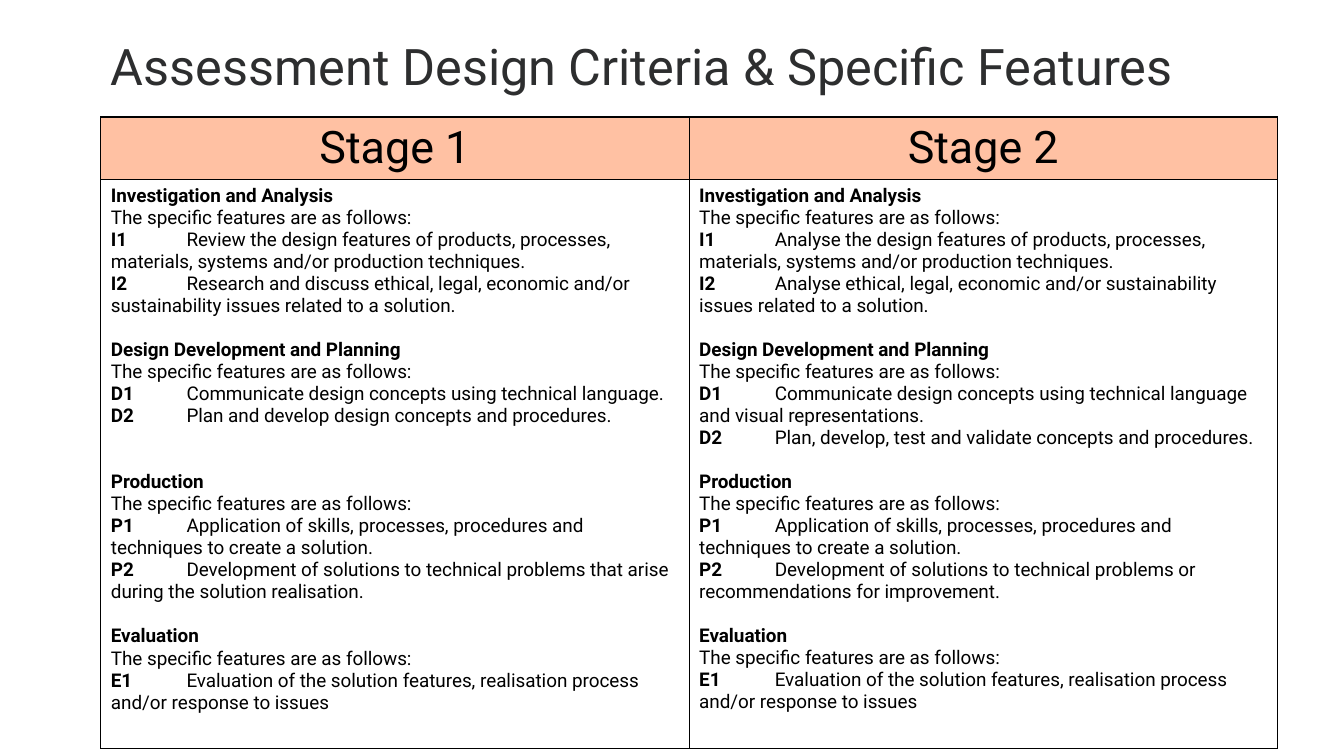
from dataclasses import dataclass

from lxml import etree
from pptx import Presentation
from pptx.dml.color import RGBColor
from pptx.enum import text as txt
from pptx.oxml import ns
from pptx.util import Inches, Pt


@dataclass(frozen=True)
class Theme:
    font: str = "Roboto"
    title_color: str = "2D2E2F"
    ink: str = "000000"
    header_fill: str = "FFC1A3"
    body_fill: str = "FFFFFF"
    title_size: float = 36
    stage_size: float = 32
    body_size: float = 13.5
    line_height: float = 15.8
    border: float = 1


@dataclass(frozen=True)
class Criterion:
    heading: str
    features: dict[str, str]
    lines_before: int = 1


@dataclass(frozen=True)
class Stage:
    name: str
    criteria: list[Criterion]


THEME = Theme()
INTRO = "The specific features are as follows:"

# Criteria that are the same at both stages
P1 = "Application of skills, processes, procedures and techniques to create a solution."
EVALUATION = Criterion("Evaluation", {
    "E1": "Evaluation of the solution features, realisation process and/or response to issues"})

STAGES = [
    Stage("Stage 1", [
        Criterion("Investigation and Analysis", {
            "I1": "Review the design features of products, processes, materials, "
                  "systems and/or production techniques.",
            "I2": "Research and discuss ethical, legal, economic and/or "
                  "sustainability issues related to a solution."}, 0),
        Criterion("Design Development and Planning", {
            "D1": "Communicate design concepts using technical language.",
            "D2": "Plan and develop design concepts and procedures."}),
        Criterion("Production", {
            "P1": P1,
            "P2": "Development of solutions to technical problems that arise "
                  "during the solution realisation."}, 2),
        EVALUATION]),
    Stage("Stage 2", [
        Criterion("Investigation and Analysis", {
            "I1": "Analyse the design features of products, processes, materials, "
                  "systems and/or production techniques.",
            "I2": "Analyse ethical, legal, economic and/or sustainability "
                  "issues related to a solution."}, 0),
        Criterion("Design Development and Planning", {
            "D1": "Communicate design concepts using technical language "
                  "and visual representations.",
            "D2": "Plan, develop, test and validate concepts and procedures."}),
        Criterion("Production", {
            "P1": P1,
            "P2": "Development of solutions to technical problems or "
                  "recommendations for improvement."}),
        EVALUATION]),
]


def write(paragraph, content: str, *, size: float = THEME.body_size,
          color: str = THEME.ink, bold: bool = False) -> None:
    """Append formatted text to a paragraph."""
    run = paragraph.add_run()
    run.text = content
    run.font.name = THEME.font
    run.font.size = Pt(size)
    run.font.bold = bold
    run.font.color.rgb = RGBColor.from_string(color)


def add_tab_stop(paragraph, position: int) -> None:
    tabs = etree.SubElement(paragraph._p.get_or_add_pPr(), ns.qn("a:tabLst"))
    etree.SubElement(tabs, ns.qn("a:tab"), pos=str(position), algn="l")


def style_cell(cell, fill: str) -> None:
    """Fill a cell and outline its four sides."""
    cell.fill.solid()
    cell.fill.fore_color.rgb = RGBColor.from_string(fill)
    properties = cell._tc.get_or_add_tcPr()
    for index, side in enumerate(("lnL", "lnR", "lnT", "lnB")):
        line = etree.Element(ns.qn(f"a:{side}"), w=str(Pt(THEME.border)))
        solid = etree.SubElement(line, ns.qn("a:solidFill"))
        etree.SubElement(solid, ns.qn("a:srgbClr"), val=THEME.ink)
        properties.insert(index, line)


def write_criteria(frame, criteria: list[Criterion]) -> None:
    for index, criterion in enumerate(criteria):
        heading = frame.add_paragraph() if index else frame.paragraphs[0]
        if criterion.lines_before:
            heading.space_before = Pt(criterion.lines_before * THEME.line_height)
        write(heading, criterion.heading, bold=True)
        write(frame.add_paragraph(), INTRO)
        for code, description in criterion.features.items():
            feature = frame.add_paragraph()
            add_tab_stop(feature, Inches(0.75))
            write(feature, code, bold=True)
            write(feature, f"\t{description}")


def add_title(slide, content: str) -> None:
    title = slide.shapes.title
    title.left, title.top = Inches(1), Inches(0.22)
    title.width, title.height = Inches(11.67), Inches(0.94)
    frame = title.text_frame
    frame.auto_size = txt.MSO_AUTO_SIZE.NONE
    frame.vertical_anchor = txt.MSO_ANCHOR.MIDDLE
    heading = frame.paragraphs[0]
    heading.alignment = txt.PP_ALIGN.LEFT
    heading.line_spacing = 0.9
    write(heading, content, size=THEME.title_size, color=THEME.title_color)


def add_stage_table(slide, stages: list[Stage]) -> None:
    table = slide.shapes.add_table(2, len(stages), Inches(1), Inches(1.16),
                                   Inches(11.67), Inches(6.26)).table
    table.first_row = table.horz_banding = False
    table.rows[0].height, table.rows[1].height = Inches(0.62), Inches(5.64)
    for column, stage in enumerate(stages):
        header, body = table.cell(0, column), table.cell(1, column)
        style_cell(header, THEME.header_fill)
        style_cell(body, THEME.body_fill)
        name = header.text_frame.paragraphs[0]
        name.alignment = txt.PP_ALIGN.CENTER
        write(name, stage.name, size=THEME.stage_size)
        write_criteria(body.text_frame, stage.criteria)


def main() -> None:
    deck = Presentation()
    deck.slide_width, deck.slide_height = Inches(13.33), Inches(7.5)
    slide = deck.slides.add_slide(deck.slide_layouts[5])
    add_title(slide, "Assessment Design Criteria & Specific Features")
    add_stage_table(slide, STAGES)
    deck.save("out.pptx")


if __name__ == "__main__":
    main()
